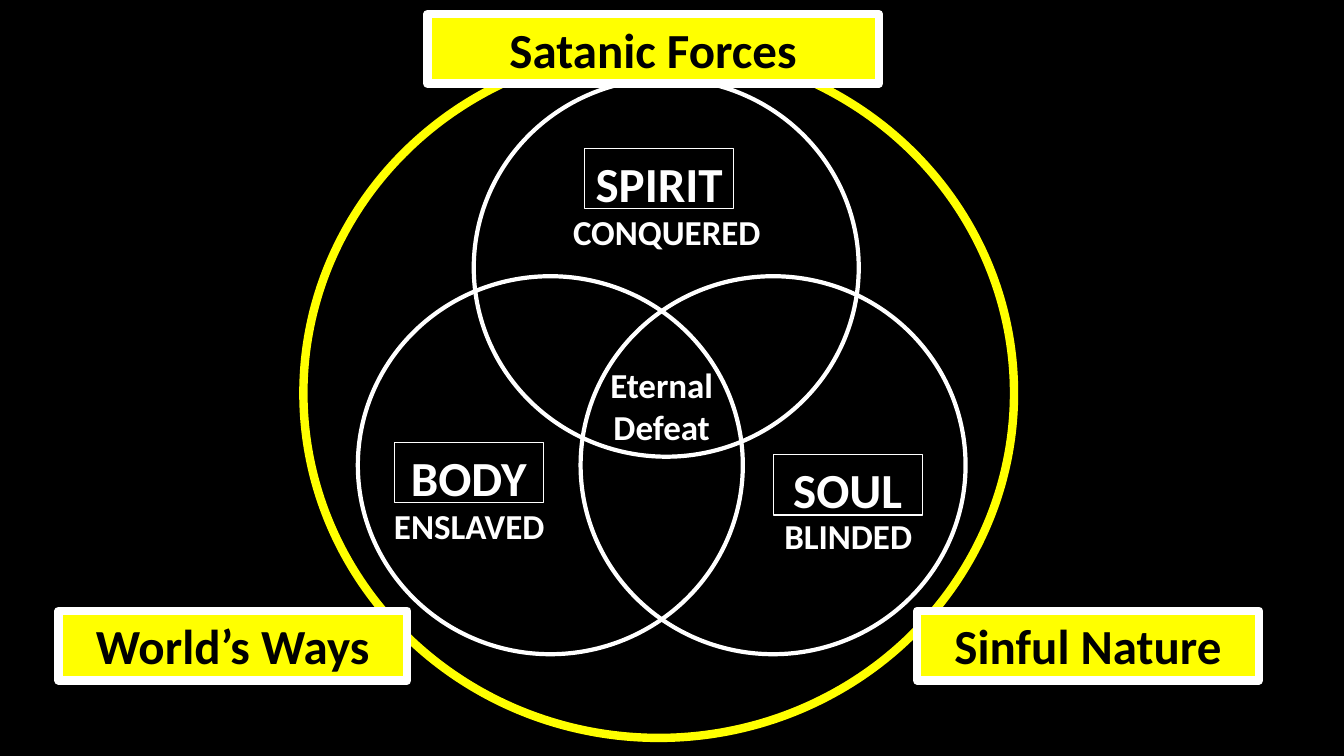
from pptx import Presentation
from pptx.dml.color import RGBColor
from pptx.enum.shapes import MSO_SHAPE
from pptx.enum.text import MSO_ANCHOR, PP_ALIGN
from pptx.util import Pt

BLACK, WHITE, YELLOW = "000000", "FFFFFF", "FFFF00"


def add_outline(kind, left, top, width, height, line_color, line_width, fill=None):
    shape = page.shapes.add_shape(kind, Pt(left), Pt(top), Pt(width), Pt(height))
    shape.shadow.inherit = False
    if fill:
        shape.fill.solid()
        shape.fill.fore_color.rgb = RGBColor.from_string(fill)
    else:
        shape.fill.background()
    shape.line.color.rgb = RGBColor.from_string(line_color)
    shape.line.width = Pt(line_width)
    return shape


def write_lines(box, lines, size, color):
    frame = box.text_frame
    frame.word_wrap = True
    frame.vertical_anchor = MSO_ANCHOR.TOP
    for index, line in enumerate(lines):
        para = frame.add_paragraph() if index else frame.paragraphs[0]
        para.alignment = PP_ALIGN.CENTER
        span = para.add_run()
        span.text = line
        span.font.color.rgb = RGBColor.from_string(color)
        for name, value in {"name": "Calibri", "size": Pt(size), "bold": True}.items():
            setattr(span.font, name, value)


deck = Presentation()
deck.slide_width, deck.slide_height = Pt(960), Pt(540)
page = deck.slides.add_slide(deck.slide_layouts[6])
page.background.fill.solid()
page.background.fill.fore_color.rgb = RGBColor.from_string(BLACK)

# Surrounding world and the three overlapping parts of a person
add_outline(MSO_SHAPE.OVAL, 216.7, 34.6, 507.6, 492.5, YELLOW, 6)
for left, top in [(255.6, 197.3), (414.7, 197.3), (338.4, 56.2)]:
    add_outline(MSO_SHAPE.OVAL, left, top, 275, 270, WHITE, 3)

for part, left, top in [("SOUL", 552.2, 324.7), ("SPIRIT", 417.6, 105.8), ("BODY", 281.5, 316.1)]:
    part_box = add_outline(MSO_SHAPE.RECTANGLE, left, top, 106.6, 43.2, WHITE, 0.75)
    write_lines(part_box, [part], 35, WHITE)

conditions = [
    (["BLINDED"], 483.8, 364.3, 244.1, 37.4),
    (["CONQUERED"], 396.7, 146.9, 159.1, 37.4),
    (["ENSLAVED"], 255.6, 357.1, 159.1, 37.4),
    (["Eternal", "Defeat"], 350.6, 256.3, 244.1, 67.7),
]
for lines, left, top, width, height in conditions:
    condition_box = page.shapes.add_textbox(Pt(left), Pt(top), Pt(width), Pt(height))
    write_lines(condition_box, lines, 25, WHITE)

# Outside forces
forces = [
    ("World’s Ways", 41.8, 436.3, 249.1),
    ("Sinful Nature", 655.2, 436.3, 244.1),
    ("Satanic Forces", 305.3, 10.1, 322.6),
]
for force, left, top, width in forces:
    force_box = add_outline(MSO_SHAPE.RECTANGLE, left, top, width, 49.7, WHITE, 6, YELLOW)
    write_lines(force_box, [force], 35, BLACK)

deck.save("out.pptx")
